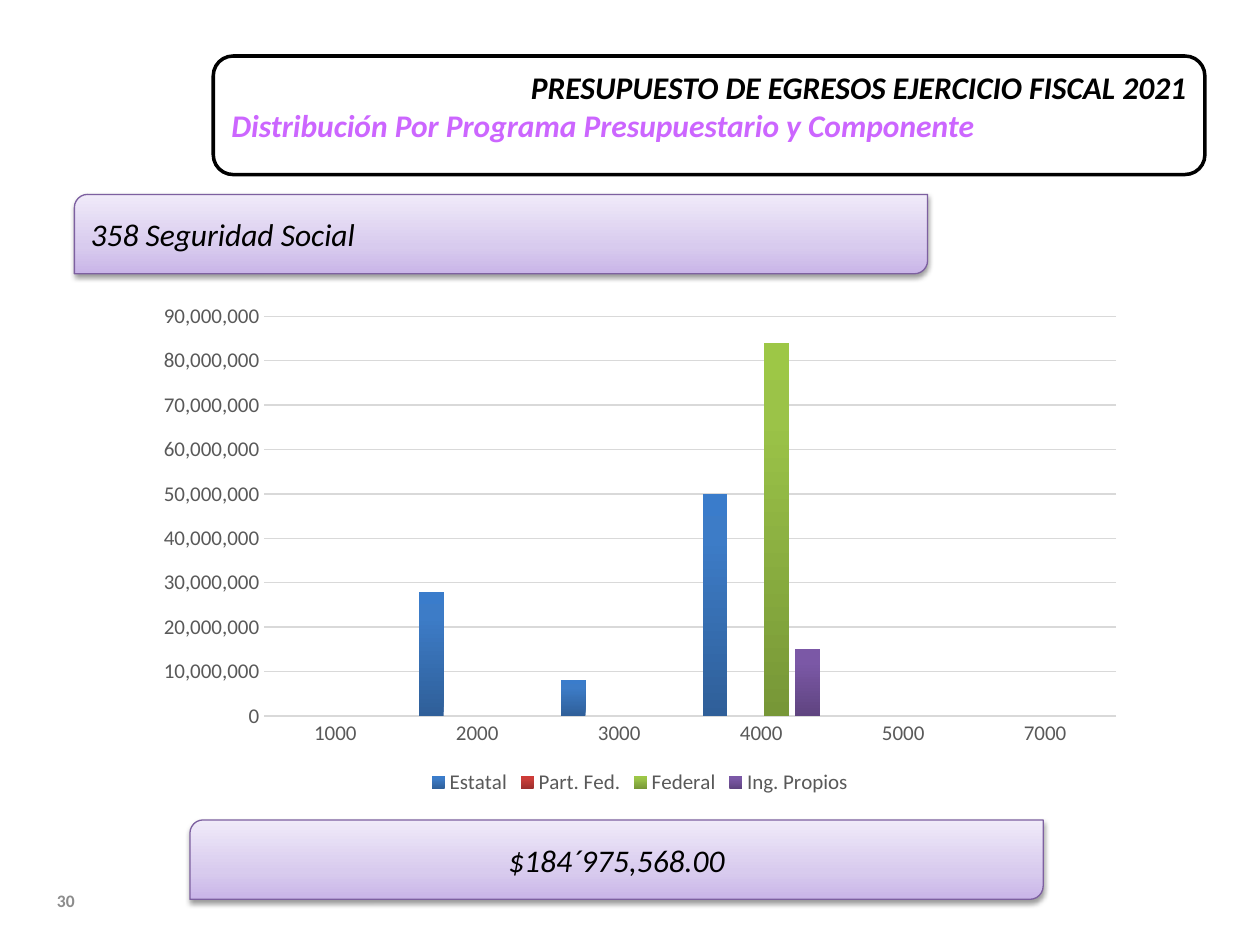
"""Build the 2021 budget slide for programme 358, Seguridad Social."""
from copy import deepcopy

from lxml import etree
from pptx import Presentation
from pptx import util as u
from pptx.chart import data
from pptx.dml.color import RGBColor
from pptx.enum import chart as ch, shapes, text
from pptx.oxml import ns

BLACK = RGBColor(0x00, 0x00, 0x00)
LILAC = RGBColor(0xCC, 0x66, 0xFF)
VIOLET = RGBColor(0x7D, 0x60, 0xA0)
GREY = RGBColor(0x59, 0x59, 0x59)
PALE = RGBColor(0xD9, 0xD9, 0xD9)
NUMBER = RGBColor(0x8C, 0x8C, 0x8C)
FONT = "Calibri"
ALIGN = text.PP_ALIGN

HEADER = [
    ("PRESUPUESTO DE EGRESOS EJERCICIO FISCAL 2021", ALIGN.RIGHT, BLACK),
    ("Distribución Por Programa Presupuestario y Componente", ALIGN.JUSTIFY, LILAC),
]
BANNERS = [
    ("358 Seguridad Social", ALIGN.LEFT, 1.5, 3.92),
    ("$184´975,568.00", ALIGN.CENTER, 3.83, 16.53),
]
BANNER_STOPS = [(0, "C9B5E8"), (0.35, "D8CBEE"), (1, "F0EAF9")]
CATEGORIES = ["1000", "2000", "3000", "4000", "5000", "7000"]
SERIES = [
    ("Estatal", [None, 28000000, 8000000, 50000000, 0, None],
     ("2F5F99", "3D7CC7", "3A7CCB")),
    ("Part. Fed.", [None] * 6, ("9C2F2D", "CB3E3A", "CE3B37")),
    ("Federal", [None, None, None, 84000000, None, None],
     ("779737", "9BC348", "9DC746")),
    ("Ing. Propios", [None, None, None, 15000000, None, None],
     ("5F4480", "7B58A6", "7C57A8")),
]
SERIES_POSITIONS = (0, 0.8, 1)
SHADOW = (
    f'<a:outerShdw xmlns:a="{ns.nsuri("a")}" blurRad="40000" dist="20000" '
    'dir="5400000" rotWithShape="0"><a:srgbClr val="000000">'
    '<a:alpha val="38000"/></a:srgbClr></a:outerShdw>'
)


def box(*lengths):
    return [u.Cm(n) for n in lengths]


def style(font, size, color, bold=False, italic=False):
    font.name, font.size = FONT, u.Pt(size)
    font.bold, font.italic = bold, italic
    font.color.rgb = color


def write(p, words, align, size, color, bold=False, italic=False):
    p.text, p.alignment = words, align
    style(p.runs[0].font, size, color, bold, italic)


def shade(fill, sp_pr, stops):
    fill.gradient()
    fill.gradient_angle = 90
    stop_list = sp_pr.find(".//" + ns.qn("a:gsLst"))
    stop_list.append(deepcopy(stop_list[0]))
    for stop, (position, color) in zip(fill.gradient_stops, stops):
        stop.position = position
        stop.color.rgb = RGBColor.from_string(color)


def add_header(s):
    sp = s.shapes.add_shape(shapes.MSO_SHAPE.ROUNDED_RECTANGLE,
                            *box(4.3, 1.13, 19.99, 2.39))
    sp.shadow.inherit = False
    sp.fill.background()
    sp.line.color.rgb, sp.line.width = BLACK, u.Pt(2)
    tf = sp.text_frame
    tf.vertical_anchor = text.MSO_ANCHOR.TOP
    for i, (words, align, color) in enumerate(HEADER):
        p = tf.add_paragraph() if i else tf.paragraphs[0]
        write(p, words, align, 18, color, bold=True, italic=True)


def add_banner(s, words, align, left, top):
    sp = s.shapes.add_shape(shapes.MSO_SHAPE.ROUND_2_DIAG_RECTANGLE,
                            *box(left, top, 17.2, 1.6))
    sp_pr = sp._element.spPr
    shade(sp.fill, sp_pr, BANNER_STOPS)
    sp.line.color.rgb, sp.line.width = VIOLET, u.Pt(0.75)
    sp.shadow.inherit = False
    sp_pr.find(ns.qn("a:effectLst")).append(etree.fromstring(SHADOW))
    tf = sp.text_frame
    tf.vertical_anchor = text.MSO_ANCHOR.MIDDLE
    write(tf.paragraphs[0], words, align, 18, BLACK, italic=True)


def add_budget_chart(s):
    cd = data.CategoryChartData(number_format="#,##0")
    cd.categories = CATEGORIES
    for name, values, _ in SERIES:
        cd.add_series(name, values)
    chart = s.shapes.add_chart(ch.XL_CHART_TYPE.COLUMN_CLUSTERED,
                               *box(2.9, 5.92, 20, 10.21), cd).chart
    style(chart.font, 12, BLACK)
    chart.has_title = False
    chart.has_legend = True
    chart.legend.position = ch.XL_LEGEND_POSITION.BOTTOM
    chart.legend.include_in_layout = False
    style(chart.legend.font, 12, GREY)

    plot = chart.plots[0]
    plot.gap_width, plot.overlap = 100, -24
    plot.vary_by_categories = False
    for series, (_, _, colors) in zip(plot.series, SERIES):
        shade(series.format.fill, series._element.get_or_add_spPr(),
              zip(SERIES_POSITIONS, colors))

    for axis in (chart.category_axis, chart.value_axis):
        axis.major_tick_mark = axis.minor_tick_mark = ch.XL_TICK_MARK.NONE
        style(axis.tick_labels.font, 12, GREY)
    line = chart.category_axis.format.line
    line.color.rgb, line.width = PALE, u.Pt(1)
    values = chart.value_axis
    values.format.line.fill.background()
    values.minimum_scale, values.maximum_scale = 0, 90000000
    values.major_unit = 10000000
    values.tick_labels.number_format = "#,##0"
    values.tick_labels.number_format_is_linked = False
    grid = values.major_gridlines.format.line
    grid.color.rgb, grid.width = PALE, u.Pt(0.75)


def add_page_number(s):
    tf = s.shapes.add_textbox(*box(0.9, 17.65, 5.92, 1.02)).text_frame
    tf.word_wrap = True
    tf.vertical_anchor = text.MSO_ANCHOR.MIDDLE
    write(tf.paragraphs[0], "30", ALIGN.LEFT, 10, NUMBER, bold=True)


def main():
    prs = Presentation()
    prs.slide_width, prs.slide_height = box(25.4, 19.05)
    s = prs.slides.add_slide(prs.slide_layouts[6])
    add_page_number(s)
    add_header(s)
    add_budget_chart(s)
    for banner in BANNERS:
        add_banner(s, *banner)
    prs.save("out.pptx")


if __name__ == "__main__":
    main()
